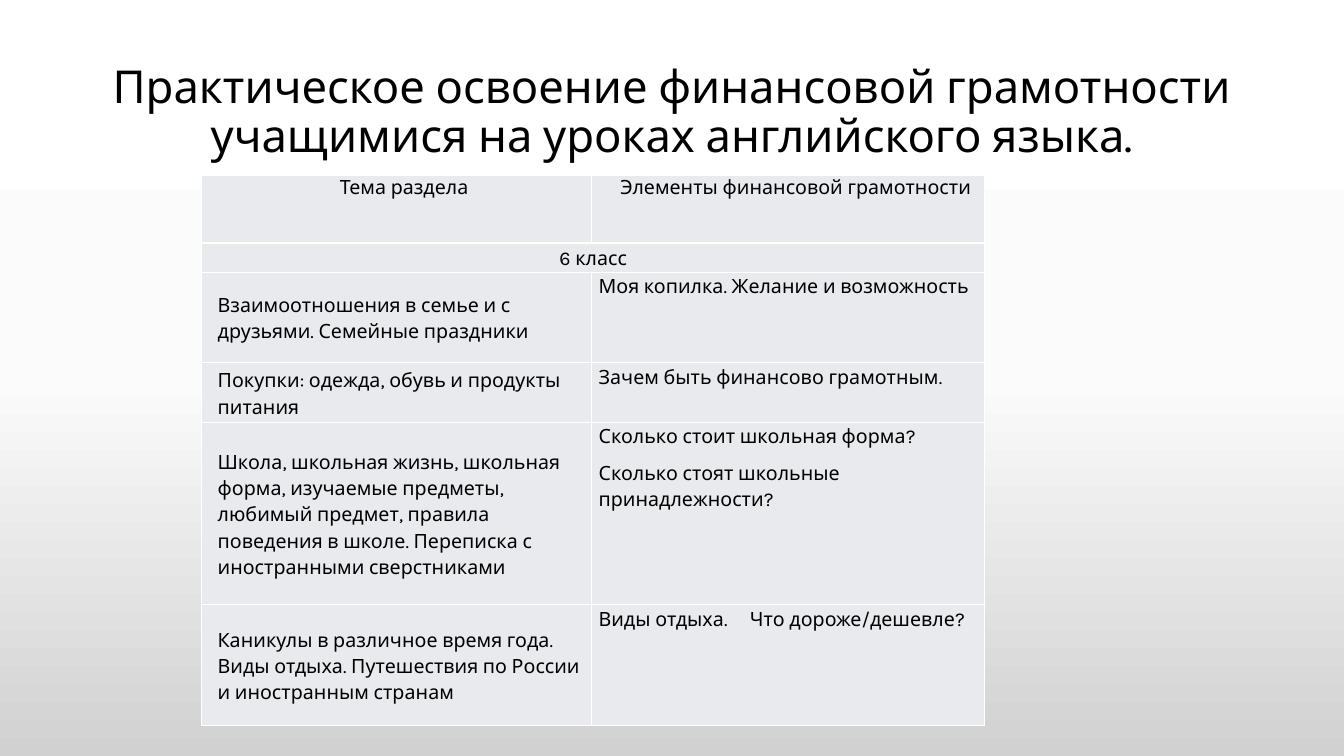
import copy
import pptx
import pptx.util
import pptx.oxml
import pptx.oxml.ns
import pptx.dml.color
import pptx.enum.text

Pt = pptx.util.Pt
qn = pptx.oxml.ns.qn
ALIGN = pptx.enum.text.PP_ALIGN
ANCHOR = pptx.enum.text.MSO_ANCHOR

TITLE = "Практическое освоение финансовой грамотности учащимися на уроках английского языка."
HEADER = [("Тема раздела", "Элементы финансовой грамотности")]
TOPICS = [
    ("6 класс", ""),
    ("Взаимоотношения в семье и с друзьями. Семейные праздники",
     "Моя копилка. Желание и возможность"),
    ("Покупки: одежда, обувь и продукты питания",
     "Зачем быть финансово грамотным."),
    ("Школа, школьная жизнь, школьная форма, изучаемые предметы, любимый предмет, "
     "правила поведения в школе. Переписка с иностранными сверстниками",
     "Сколько стоит школьная форма?\nСколько стоят школьные принадлежности?"),
    ("Каникулы в различное время года. Виды отдыха. Путешествия по России и иностранным странам",
     "Виды отдыха.\tЧто дороже/дешевле?"),
]
COLORS = {"text": "000000", "cell": "E8EAED", "border": "FFFFFF"}
BACKGROUND = [(0, "FFFFFF"), (0.5, "FBFBFB"), (1, "D1D1D1")]
FONT = "Karla"
LEFT = 144
COLUMNS = [278.6, 280.8]
HEADER_TOP, HEADER_ROWS = 125.3, [48.2]
TOPIC_ROWS = [20.9, 64.8, 42.5, 130.3, 86.4]
TAB_STOP = 232

FORMATS = {
    "header": dict(anchor=ANCHOR.TOP, align=ALIGN.CENTER, indent=10.8, spacing=1.07, after=7.5),
    "grade": dict(anchor=ANCHOR.MIDDLE, align=ALIGN.CENTER, indent=0, spacing=1.15, after=7.5),
    "topic": dict(anchor=ANCHOR.MIDDLE, align=ALIGN.LEFT, indent=6.5, spacing=1.15, after=10),
    "element": dict(anchor=ANCHOR.TOP, align=ALIGN.LEFT, indent=0, spacing=1.15, after=7.5),
}


def rgb(value):
    return pptx.dml.color.RGBColor.from_string(value)


def set_all(obj, **values):
    for name, value in values.items():
        setattr(obj, name, value)


def add_run(p, text, size):
    r = p.add_run()
    r.text = text
    set_all(r.font, name=FONT, size=Pt(size), bold=False)
    r.font.color.rgb = rgb(COLORS["text"])


def add_sub(parent, tag, **attributes):
    child = pptx.oxml.parse_xml(f"<{tag} {pptx.oxml.ns.nsdecls('a')}/>")
    for name, value in attributes.items():
        child.set(name, str(value))
    parent.append(child)
    return child


def fill_cell(cell, text, fmt):
    set_all(cell, margin_left=Pt(5), margin_right=Pt(5), margin_top=0,
            margin_bottom=0, vertical_anchor=fmt["anchor"])
    tc_pr = cell._tc.get_or_add_tcPr()
    for side in "LRTB":
        line = add_sub(tc_pr, f"a:ln{side}", w=Pt(1))
        add_sub(add_sub(line, "a:solidFill"), "a:srgbClr", val=COLORS["border"])
    cell.fill.solid()
    cell.fill.fore_color.rgb = rgb(COLORS["cell"])
    tf = cell.text_frame
    for i, line in enumerate(text.split("\n")):
        p = tf.add_paragraph() if i else tf.paragraphs[0]
        set_all(p, alignment=fmt["align"], line_spacing=fmt["spacing"], space_after=Pt(fmt["after"]))
        p_pr = p._p.get_or_add_pPr()
        p_pr.set("marL", str(Pt(fmt["indent"])))
        p_pr.set("indent", "0")
        if "\t" in line:
            add_sub(add_sub(p_pr, "a:tabLst"), "a:tab", pos=Pt(TAB_STOP), algn="l")
        add_run(p, line, 14)


def add_grid(s, rows, top, heights, choose_format):
    frame = s.shapes.add_table(len(rows), len(COLUMNS), Pt(LEFT), Pt(top),
                               Pt(sum(COLUMNS)), Pt(sum(heights)))
    table = frame.table
    set_all(table, first_row=False, horz_banding=False)
    for column, width in zip(table.columns, COLUMNS):
        column.width = Pt(width)
    for r, (row, height) in enumerate(zip(rows, heights)):
        table.rows[r].height = Pt(height)
        for c, text in enumerate(row):
            fill_cell(table.cell(r, c), text, FORMATS[choose_format(r, c)])
    return table


def topic_format(r, c):
    return "grade" if r == 0 else ("topic", "element")[c]


def add_background(s):
    fill = s.background.fill
    fill.gradient()
    fill.gradient_angle = 270
    stops = s.element.find(".//" + qn("a:gsLst"))
    stops.append(copy.deepcopy(stops[0]))
    for stop, (position, color) in zip(fill.gradient_stops, BACKGROUND):
        stop.position = position
        stop.color.rgb = rgb(color)


def add_title(s):
    tf = s.shapes.add_textbox(Pt(66), Pt(28.8), Pt(828), Pt(104.4)).text_frame
    set_all(tf, word_wrap=True, vertical_anchor=ANCHOR.MIDDLE)
    p = tf.paragraphs[0]
    set_all(p, alignment=ALIGN.CENTER, line_spacing=0.9)
    add_run(p, TITLE, 32.4)


def main():
    prs = pptx.Presentation()
    set_all(prs, slide_width=Pt(960), slide_height=Pt(540))
    s = prs.slides.add_slide(prs.slide_layouts[6])
    add_background(s)
    add_title(s)
    topics = add_grid(s, TOPICS, HEADER_TOP + sum(HEADER_ROWS), TOPIC_ROWS, topic_format)
    topics.cell(0, 0).merge(topics.cell(0, 1))
    add_grid(s, HEADER, HEADER_TOP, HEADER_ROWS, lambda r, c: "header")
    prs.save("out.pptx")


if __name__ == "__main__":
    main()
